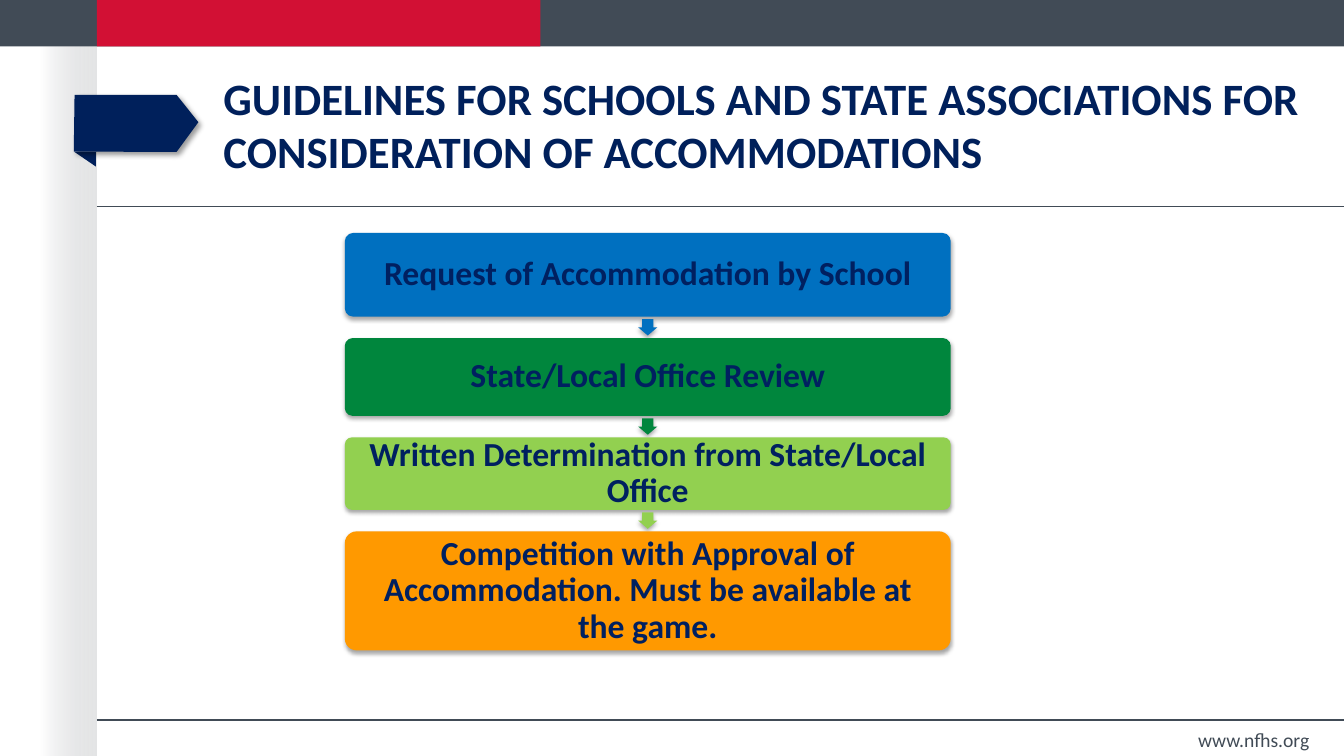
from lxml.etree import SubElement
from pptx import Presentation
from pptx.dml.color import RGBColor
from pptx.enum.shapes import MSO_CONNECTOR, MSO_SHAPE
from pptx.enum.text import MSO_ANCHOR, PP_ALIGN
from pptx.oxml.ns import qn
from pptx.util import Cm, Pt

# Content
TITLE = "GUIDELINES FOR SCHOOLS AND STATE ASSOCIATIONS FOR CONSIDERATION OF ACCOMMODATIONS"
WEBSITE = "www.nfhs.org"
STEPS = [  # text, fill colour, height in cm
    ("Request of Accommodation by School", "blue", 2.11),
    ("State/Local Office Review", "green", 1.96),
    ("Written Determination from State/Local Office", "lime", 1.83),
    ("Competition with Approval of Accommodation. Must be available at the game.", "orange", 3.0),
]
COLORS = {
    "slate": "414B56", "red": "D21034", "navy": "00205B", "step text": "002060",
    "blue": "0070C0", "green": "00863D", "lime": "92D050", "orange": "FF9900",
    "shade start": "C8C9CC", "shade end": "E4E5E6", "shadow": "000000",
}
FONT = "Calibri"

# Layout in cm
WIDTH, HEIGHT = 33.87, 19.05
BAR_HEIGHT = 1.17
MARGIN = 2.44
RULES = (5.21, 18.14)
MARKER = [(1.88, 2.39), (1.86, 3.82), (4.45, 3.83), (5.0, 3.08), (4.45, 2.39)]
MARKER_FOLD = [(1.88, 3.83), (2.42, 3.83), (2.42, 4.2)]
STEP_LEFT, STEP_TOP, STEP_WIDTH, STEP_GAP = 8.69, 5.87, 15.27, 0.54
ARROW_WIDTH, ARROW_HEIGHT = 0.48, 0.41

# Shadows: opacity in percent, blur and distance in points, angle in degrees
MARKER_SHADOW = (40, 4, 3, 45)
STEP_SHADOW = (35, 3.1, 1.8, 90)

presentation = Presentation()
presentation.slide_width, presentation.slide_height = Cm(WIDTH), Cm(HEIGHT)
slide = presentation.slides.add_slide(presentation.slide_layouts[6])


def rgb(name):
    return RGBColor.from_string(COLORS[name])


def finish(shape, color, shadow=None):
    shape.fill.solid()
    shape.fill.fore_color.rgb = rgb(color)
    shape.line.fill.background()
    shape.shadow.inherit = False
    if shadow:
        opacity, blur, distance, angle = shadow
        effects = shape._element.spPr.find(qn("a:effectLst"))
        outer = SubElement(effects, qn("a:outerShdw"), blurRad=str(Pt(blur)),
                           dist=str(Pt(distance)), dir=str(angle * 60000), rotWithShape="0")
        shade = SubElement(outer, qn("a:srgbClr"), val=COLORS["shadow"])
        SubElement(shade, qn("a:alpha"), val=str(opacity * 1000))
    return shape


def add_block(kind, left, top, width, height, color, shadow=None):
    shape = slide.shapes.add_shape(kind, Cm(left), Cm(top), Cm(width), Cm(height))
    return finish(shape, color, shadow)


def add_outline(points, color, shadow=None):
    corners = [(Cm(x), Cm(y)) for x, y in points]
    builder = slide.shapes.build_freeform(*corners[0])
    builder.add_line_segments(corners[1:], close=True)
    return finish(builder.convert_to_shape(), color, shadow)


def write(text, shape, size, color, bold=False, align=PP_ALIGN.LEFT, spacing=None, inset=(0.25, 0.13)):
    frame = shape.text_frame
    frame.word_wrap = True
    frame.vertical_anchor = MSO_ANCHOR.MIDDLE
    frame.margin_left = frame.margin_right = Cm(inset[0])
    frame.margin_top = frame.margin_bottom = Cm(inset[1])
    paragraph = frame.paragraphs[0]
    paragraph.text = text
    paragraph.alignment = align
    paragraph.line_spacing = spacing
    font = paragraph.font
    font.name, font.size, font.bold = FONT, Pt(size), bold
    font.color.rgb = rgb(color)


# Shaded left strip, fading out to the left
strip = add_block(MSO_SHAPE.RECTANGLE, 1.02, BAR_HEIGHT, MARGIN - 1.02, HEIGHT - BAR_HEIGHT, "shade end")
strip.fill.gradient()
strip.fill.gradient_angle = 0
for stop, shade_name in zip(strip.fill.gradient_stops, ("shade start", "shade end")):
    stop.color.rgb = rgb(shade_name)
clear_color = next(strip._element.spPr.iter(qn("a:srgbClr")))
SubElement(clear_color, qn("a:alpha"), val="0")

# Top bar
add_block(MSO_SHAPE.RECTANGLE, 0, 0, WIDTH, BAR_HEIGHT, "slate")
add_block(MSO_SHAPE.RECTANGLE, MARGIN, 0, 11.18, BAR_HEIGHT, "red")

# Rules under the title and above the footer
for y in RULES:
    rule = slide.shapes.add_connector(MSO_CONNECTOR.STRAIGHT, Cm(MARGIN), Cm(y), Cm(WIDTH), Cm(y))
    rule.line.color.rgb = rgb("slate")
    rule.line.width = Pt(1)
    SubElement(rule._element.spPr, qn("a:effectLst"))

# Title marker
add_outline(MARKER_FOLD, "navy")
add_outline(MARKER, "navy", MARKER_SHADOW)

# Title and footer
title = slide.shapes.add_textbox(Cm(5.38), Cm(1.45), Cm(27.86), Cm(3.35))
write(TITLE, title, 32, "navy", bold=True, spacing=Pt(38))
footer = slide.shapes.add_textbox(Cm(27.71), Cm(18.24), Cm(5.54), Cm(0.81))
write(WEBSITE, footer, 14, "slate", align=PP_ALIGN.RIGHT)

# Steps, each followed by an arrow except the last
top = STEP_TOP
for number, (text, color, height) in enumerate(STEPS, 1):
    box = add_block(MSO_SHAPE.ROUNDED_RECTANGLE, STEP_LEFT, top, STEP_WIDTH, height, color, STEP_SHADOW)
    box.adjustments[0] = 0.1
    write(text, box, 24, "step text", bold=True, align=PP_ALIGN.CENTER, spacing=0.9, inset=(0.3, 0.25))
    top += height
    if number < len(STEPS):
        arrow = add_block(MSO_SHAPE.DOWN_ARROW, STEP_LEFT + (STEP_WIDTH - ARROW_WIDTH) / 2,
                          top + (STEP_GAP - ARROW_HEIGHT) / 2, ARROW_WIDTH, ARROW_HEIGHT, color, STEP_SHADOW)
        arrow.adjustments[0] = 0.6
    top += STEP_GAP

presentation.save("out.pptx")
